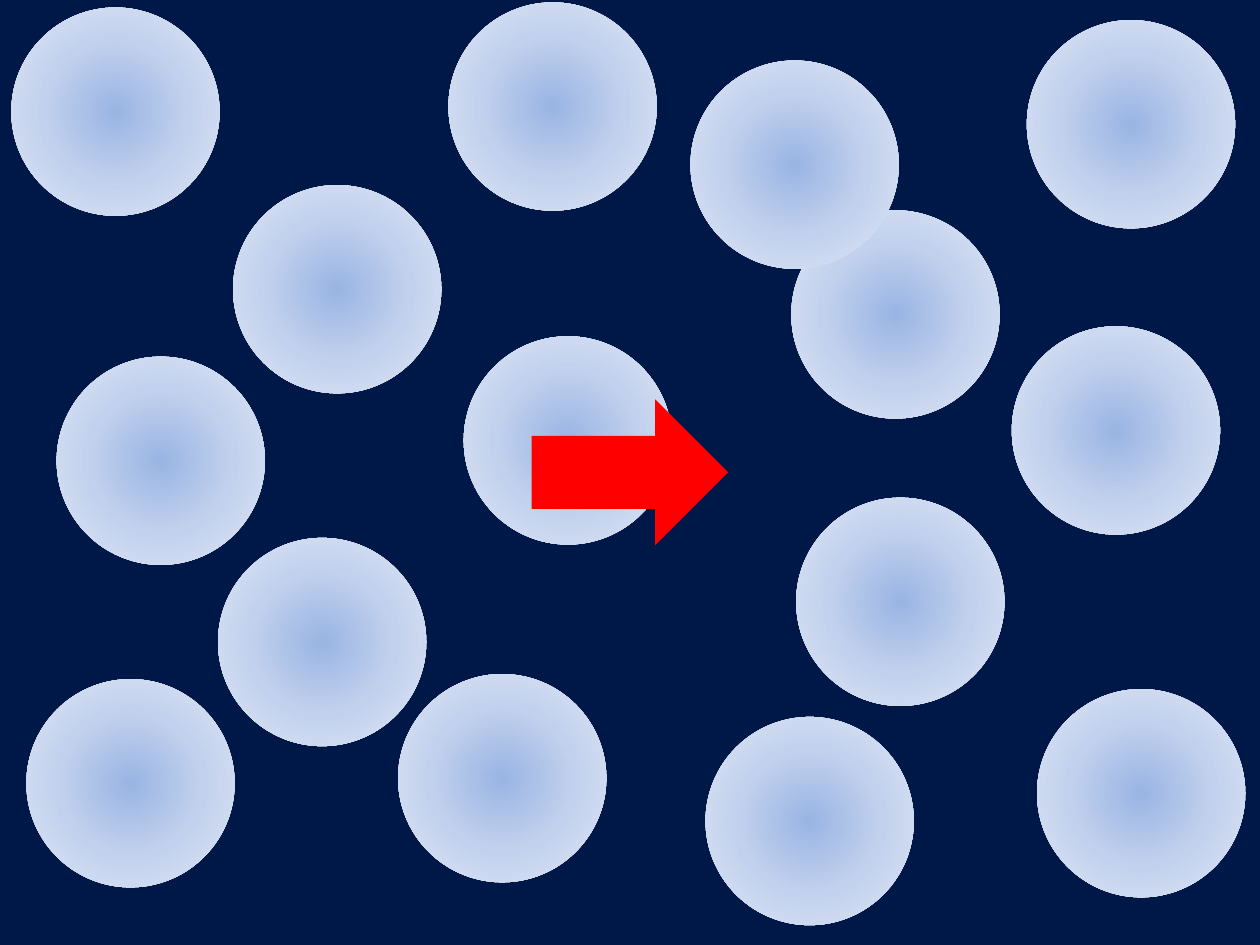
from dataclasses import dataclass

from pptx import Presentation
from pptx import util as u
from pptx.dml.color import RGBColor
from pptx.enum import shapes
from pptx.oxml import parse_xml
from pptx.oxml.ns import nsdecls, qn


@dataclass(frozen=True)
class Theme:
    """Colours of the slide."""
    backdrop: str = "001848"
    arrow: str = "FF0000"
    bubble: tuple = ((0, "9AB5E4"), (50, "C2D1ED"), (100, "E1E8F5"))


WIDTH, HEIGHT = 720, 540
DIAMETER = 119
BUBBLES = (
    (265, 192.2), (6.5, 4.3), (592.6, 393.8), (124.6, 307.4), (452.2, 120.2),
    (32.4, 203.8), (403.2, 409.7), (256.3, 1.4), (578.2, 186.5), (586.8, 11.5),
    (133.2, 105.8), (394.6, 34.6), (15.1, 388.1), (455, 284.4), (227.5, 385.2),
)


class Painter:
    """Draws the kinds of element on the current slide in one theme."""

    def __init__(self, s, theme):
        """Keep the slide and the theme."""
        self.s = s
        self.theme = theme

    def shape(self, kind, x, y, w, h):
        """Add a preset shape without line or shadow."""
        sp = self.s.shapes.add_shape(kind, *map(u.Pt, (x, y, w, h)))
        sp.shadow.inherit = False
        sp.line.fill.background()
        return sp

    def solid(self, kind, x, y, w, h, color):
        """Add a preset shape in one colour."""
        sp = self.shape(kind, x, y, w, h)
        sp.fill.solid()
        sp.fill.fore_color.rgb = RGBColor.from_string(color)

    def backdrop(self):
        """Cover the slide with the dark rectangle."""
        self.solid(shapes.MSO_SHAPE.RECTANGLE, 0, 0, WIDTH, HEIGHT, self.theme.backdrop)

    def arrow(self, x, y, w, h):
        """Add the arrow pointing right."""
        self.solid(shapes.MSO_SHAPE.RIGHT_ARROW, x, y, w, h, self.theme.arrow)

    def bubble(self, x, y):
        """Add a circle whose colour fades out from its centre."""
        sp = self.shape(shapes.MSO_SHAPE.OVAL, x, y, DIAMETER, DIAMETER)
        sp.fill.gradient()
        stops = "".join(
            f'<a:gs pos="{pos * 1000}"><a:srgbClr val="{color}"/></a:gs>'
            for pos, color in self.theme.bubble
        )
        grad = parse_xml(
            f'<a:gradFill {nsdecls("a")} rotWithShape="1"><a:gsLst>{stops}</a:gsLst>'
            '<a:path path="circle"><a:fillToRect l="50000" t="50000" r="50000" b="50000"/>'
            '</a:path></a:gradFill>'
        )
        spPr = sp.element.spPr
        spPr.replace(spPr.find(qn("a:gradFill")), grad)


def main():
    """Build the slide and save it."""
    prs = Presentation()
    prs.slide_width, prs.slide_height = u.Pt(WIDTH), u.Pt(HEIGHT)
    painter = Painter(prs.slides.add_slide(prs.slide_layouts[6]), Theme())
    painter.backdrop()
    for x, y in BUBBLES:
        painter.bubble(x, y)
    painter.arrow(303.8, 228.2, 112.3, 83.5)
    prs.save("out.pptx")


if __name__ == "__main__":
    main()
